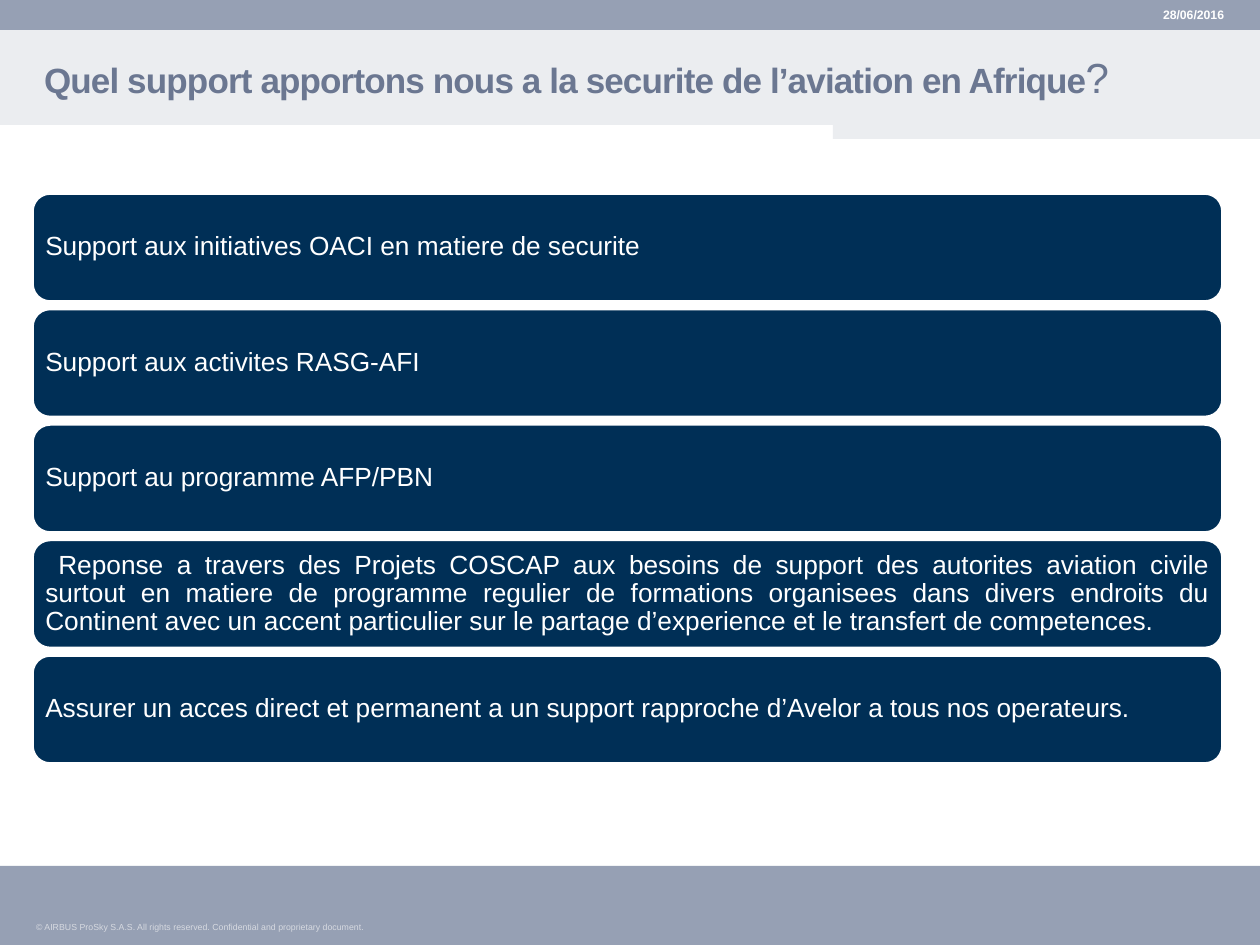
"""Builds the slide on support for aviation safety in Africa."""
from pptx import Presentation
from pptx.dml.color import RGBColor
from pptx.enum.shapes import MSO_SHAPE
from pptx.enum.text import MSO_ANCHOR, PP_ALIGN
from pptx.util import Emu, Pt

RECTANGLE, ROUNDED = MSO_SHAPE.RECTANGLE, MSO_SHAPE.ROUNDED_RECTANGLE
LEFT, RIGHT, JUSTIFY = PP_ALIGN.LEFT, PP_ALIGN.RIGHT, PP_ALIGN.JUSTIFY
MIDDLE = MSO_ANCHOR.MIDDLE

PX = 914400 // 126
WIDTH, HEIGHT = 1260, 945
FONT = "Arial"
WHITE, NAVY, BAND, PALE = "FFFFFF", "002F56", "96A0B4", "EBEDF0"
TITLE_COLOR, FOOTER_COLOR = "6B7791", "D7DAE1"

TITLE = "Quel support apportons nous a la securite de l’aviation en Afrique"
DATE = "28/06/2016"
COPYRIGHT = "© AIRBUS ProSky S.A.S. All rights reserved. Confidential and proprietary document."
SUPPORTS = [
    ("Support aux initiatives OACI en matiere de securite", LEFT, 0),
    ("Support aux activites RASG-AFI", LEFT, 0),
    ("Support au programme AFP/PBN", LEFT, 0),
    ("Reponse a travers des Projets COSCAP aux besoins de support des autorites "
     "aviation civile surtout en matiere de programme regulier de formations "
     "organisees dans divers endroits du Continent avec un accent particulier sur "
     "le partage d’experience et le transfert de competences.", JUSTIFY, 13),
    ("Assurer un acces direct et permanent a un support rapproche d’Avelor "
     "a tous nos operateurs.", LEFT, 0),
]
BANDS = [(0, 30), (866, 79)]
HEADER_OUTLINE = [(0, 30), (1260, 30), (1260, 139), (833, 139), (833, 125), (0, 125)]
BOX_LEFT, BOX_WIDTH, BOX_HEIGHT = 32, 1191, 109
FIRST_TOP, LAST_TOP = 193, 655


def px(value):
    return Emu(round(value * PX))


def color(value):
    return RGBColor.from_string(value)


def paint(shape, fill, line=None):
    shape.shadow.inherit = False
    shape.fill.solid()
    shape.fill.fore_color.rgb = color(fill)
    if line:
        shape.line.color.rgb = color(line)
        shape.line.width = Pt(2)
    else:
        shape.line.fill.background()


def add_box(slide, kind, area, fill, line=None):
    shape = slide.shapes.add_shape(kind, *map(px, area))
    paint(shape, fill, line)
    return shape


def add_run(paragraph, text, size, text_color, bold=False, spacing=None):
    run = paragraph.add_run()
    run.text = text
    run.font.name, run.font.size, run.font.bold = FONT, Pt(size), bold
    run.font.color.rgb = color(text_color)
    if spacing:
        run.font._element.set("spc", str(spacing))


def write(shape, text, size, text_color=WHITE, align=LEFT, insets=(0, 0, 0, 0),
          line_spacing=1.0, indent=0, **run_format):
    frame = shape.text_frame
    frame.word_wrap = True
    frame.vertical_anchor = MIDDLE
    (frame.margin_left, frame.margin_top,
     frame.margin_right, frame.margin_bottom) = map(px, insets)
    paragraph = frame.paragraphs[0]
    paragraph.alignment = align
    paragraph.line_spacing = line_spacing
    if indent:
        paragraph._p.get_or_add_pPr().set("indent", str(px(indent)))
    add_run(paragraph, text, size, text_color, **run_format)
    return paragraph


def add_text(slide, area, text, size, **text_format):
    return write(slide.shapes.add_textbox(*map(px, area)), text, size, **text_format)


def add_frame(slide):
    builder = slide.shapes.build_freeform(*HEADER_OUTLINE[0], scale=PX)
    builder.add_line_segments(HEADER_OUTLINE[1:], close=True)
    paint(builder.convert_to_shape(), PALE)
    for top, height in BANDS:
        add_box(slide, RECTANGLE, (0, top, WIDTH, height), BAND)
    add_text(slide, (36, 922, 421, 16), COPYRIGHT, 5,
             text_color=FOOTER_COLOR, insets=(0, 0, 13, 6))
    add_text(slide, (1055, 0, 169, 30), DATE, 7, align=RIGHT, bold=True)


def add_supports(slide):
    step = (LAST_TOP - FIRST_TOP) / (len(SUPPORTS) - 1)
    for index, (text, align, indent) in enumerate(SUPPORTS):
        area = (BOX_LEFT, FIRST_TOP + index * step, BOX_WIDTH, BOX_HEIGHT)
        box = add_box(slide, ROUNDED, area, NAVY, WHITE)
        write(box, text, 15, align=align, insets=(8, 7, 8, 7),
              line_spacing=0.9, indent=indent)


def main():
    presentation = Presentation()
    presentation.slide_width, presentation.slide_height = px(WIDTH), px(HEIGHT)
    slide = presentation.slides.add_slide(presentation.slide_layouts[6])
    add_frame(slide)
    add_supports(slide)
    title = add_text(slide, (35, 39, 1191, 84), TITLE, 20, text_color=TITLE_COLOR,
                     insets=(9, 0, 0, 0), line_spacing=0.8, bold=True, spacing=-50)
    add_run(title, "?", 24, TITLE_COLOR, spacing=-50)
    presentation.save("out.pptx")


if __name__ == "__main__":
    main()
